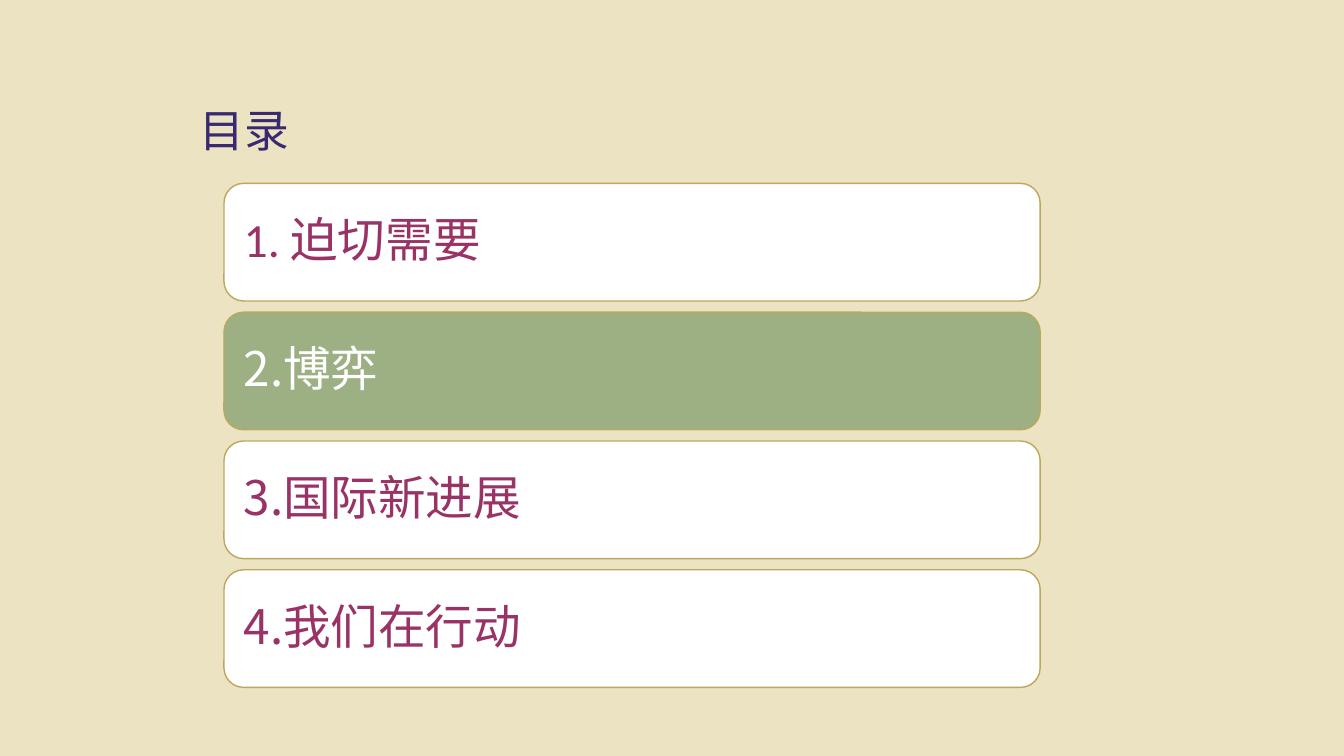
from dataclasses import dataclass

from pptx import Presentation
from pptx.dml.color import RGBColor
from pptx.enum.shapes import MSO_SHAPE
from pptx.enum.text import MSO_ANCHOR, PP_ALIGN
from pptx.oxml.ns import qn
from pptx.util import Emu, Pt

PX = 6350  # 144 px to the inch


@dataclass(frozen=True)
class Theme:
    background: str = "EBE3C2"
    title: str = "382971"
    item: str = "993366"
    item_fill: str = "FFFFFF"
    current: str = "FFFFFF"
    current_fill: str = "9CB084"
    outline: str = "BBA85D"
    latin: str = "Calibri"
    chinese: str = "Noto Sans CJK SC"
    title_size: int = 32
    item_size: int = 34


class AgendaSlide:
    def __init__(self, deck, theme):
        self.theme = theme
        self.page = deck.slides.add_slide(deck.slide_layouts[6])
        fill = self.page.background.fill
        fill.solid()
        fill.fore_color.rgb = RGBColor.from_string(theme.background)

    def add_span(self, para, text, font, size, color):
        span = para.add_run()
        span.text = text
        span.font.name = font
        span.font.size = Pt(size)
        span.font.color.rgb = RGBColor.from_string(color)
        properties = span._r.get_or_add_rPr()
        properties.set("lang", "zh-CN")
        east_asian = properties.makeelement(qn("a:ea"), {"typeface": self.theme.chinese})
        properties.find(qn("a:latin")).addnext(east_asian)

    def title(self, text, left, top, width, height):
        box = self.page.shapes.add_textbox(*(Emu(n * PX) for n in (left, top, width, height)))
        box.text_frame.word_wrap = False
        para = box.text_frame.paragraphs[0]
        self.add_span(para, text, self.theme.chinese, self.theme.title_size, self.theme.title)

    def item(self, runs, is_current, left, top, width, height):
        theme = self.theme
        box = self.page.shapes.add_shape(
            MSO_SHAPE.ROUNDED_RECTANGLE, *(Emu(n * PX) for n in (left, top, width, height)))
        box.shadow.inherit = False
        box.fill.solid()
        box.fill.fore_color.rgb = RGBColor.from_string(
            theme.current_fill if is_current else theme.item_fill)
        box.line.color.rgb = RGBColor.from_string(theme.outline)
        box.line.width = Pt(1)

        frame = box.text_frame
        frame.word_wrap = True
        frame.vertical_anchor = MSO_ANCHOR.MIDDLE
        frame.margin_left = frame.margin_right = Emu(20 * PX)
        frame.margin_top = frame.margin_bottom = Emu(20 * PX)
        para = frame.paragraphs[0]
        para.alignment = PP_ALIGN.LEFT
        para.line_spacing = 0.9
        color = theme.current if is_current else theme.item
        for text, font in runs:
            self.add_span(para, text, font, theme.item_size, color)


def main():
    deck = Presentation()
    deck.slide_width, deck.slide_height = Emu(1920 * PX), Emu(1080 * PX)
    theme = Theme()
    agenda = AgendaSlide(deck, theme)

    # Heading
    agenda.title("目录", left=271, top=140, width=158, height=92)

    # Agenda items, with the current one highlighted
    items = [
        [("1.", theme.latin), (" 迫切需要", theme.chinese)],
        [("2.博弈", theme.chinese)],
        [("3.国际新进展", theme.chinese)],
        [("4.我们在行动", theme.chinese)],
    ]
    current, first_top, pitch = 1, 262, 184
    for index, runs in enumerate(items):
        agenda.item(runs, index == current, left=320, top=first_top + index * pitch,
                    width=1166, height=168)

    deck.save("out.pptx")


if __name__ == "__main__":
    main()
